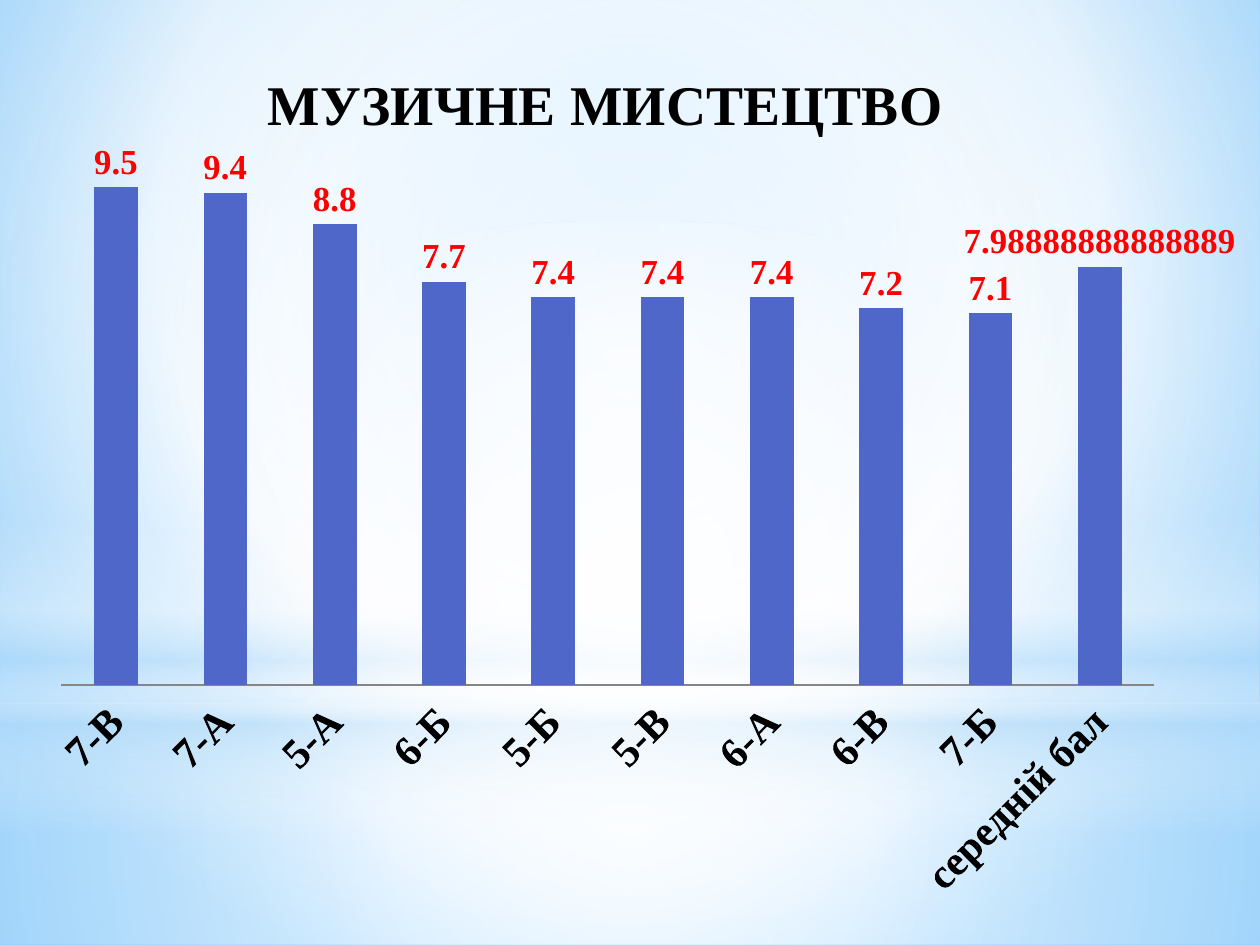
from lxml import etree
from pptx import Presentation
from pptx.chart.data import CategoryChartData
from pptx.dml.color import RGBColor
from pptx.enum.chart import XL_CHART_TYPE, XL_LABEL_POSITION, XL_TICK_LABEL_POSITION, XL_TICK_MARK
from pptx.enum.shapes import MSO_SHAPE
from pptx.oxml import parse_xml
from pptx.oxml.ns import nsdecls, qn
from pptx.util import Inches, Pt

COLUMNS = XL_CHART_TYPE.COLUMN_CLUSTERED
OUTSIDE_END = XL_LABEL_POSITION.OUTSIDE_END
LABELS_LOW = XL_TICK_LABEL_POSITION.LOW
NO_TICK = XL_TICK_MARK.NONE
RECTANGLE, OVAL = MSO_SHAPE.RECTANGLE, MSO_SHAPE.OVAL

SERIF = "Times New Roman"
WHITE, PALE, BLACK, RED = "FFFFFF", "B4DCFA", "000000", "FF0000"
CENTRE = (50, 50, 50, 50)
SCORES = {
    "7-В": 9.5, "7-А": 9.4, "5-А": 8.8, "6-Б": 7.7, "5-Б": 7.4,
    "5-В": 7.4, "6-А": 7.4, "6-В": 7.2, "7-Б": 7.1,
    "середній бал": 7.99,
}
AVERAGE_LABEL = "7.98888888888889"


def colour(value):
    return RGBColor.from_string(value)


def format_font(font, size, value=BLACK, name=SERIF, bold=True):
    font.size, font.name, font.bold = Pt(size), name, bold
    font.color.rgb = colour(value)


def write_text(frame, text, **style):
    frame.text = text
    format_font(frame.paragraphs[0].runs[0].font, **style)


def gradient(stops, focus=None):
    stop_xml = "".join(
        f'<a:gs pos="{place * 1000}"><a:srgbClr val="{value}">'
        f'<a:alpha val="{opacity * 1000}"/></a:srgbClr></a:gs>'
        for place, value, opacity in stops)
    if focus:
        sides = " ".join(f'{side}="{share * 1000}"' for side, share in zip("ltrb", focus))
        direction = f'<a:path path="circle"><a:fillToRect {sides}/></a:path>'
    else:
        direction = '<a:lin ang="5400000" scaled="0"/>'
    return parse_xml(f'<a:gradFill {nsdecls("a")} rotWithShape="1">'
                     f'<a:gsLst>{stop_xml}</a:gsLst>{direction}</a:gradFill>')


def swap_fill(properties, fill):
    solid = properties.find(qn("a:solidFill"))
    properties.replace(solid, fill)


def add_glow(page, kind, box, stops, focus=None):
    shape = page.shapes.add_shape(kind, *map(Inches, box))
    shape.shadow.inherit = False
    shape.line.fill.background()
    shape.fill.solid()
    swap_fill(shape._element.spPr, gradient(stops, focus))


def draw_backdrop(page, width, height):
    page.background.fill.solid()
    swap_fill(page.element.find(".//" + qn("p:bgPr")), gradient(
        [(0, "9ED5FF", 100), (60, WHITE, 100), (100, "5BB9FF", 100)], (20, 10, 20, 60)))
    horizon = 5.58
    add_glow(page, RECTANGLE, (0, horizon, width, height - horizon),
             [(0, WHITE, 91), (37, WHITE, 76), (100, PALE, 79)], CENTRE)
    add_glow(page, RECTANGLE, (0, 0, width, horizon),
             [(0, WHITE, 89), (48, WHITE, 62), (100, PALE, 79)], CENTRE)
    add_glow(page, RECTANGLE, (0, 4.12, width, 2.5),
             [(0, WHITE, 0), (29, WHITE, 30), (45, PALE, 40),
              (55, WHITE, 26), (65, PALE, 60), (100, WHITE, 0)])
    add_glow(page, OVAL, (0, 1.75, width, 5.58),
             [(0, WHITE, 100), (56, WHITE, 0)], CENTRE)


def set_layout(parent, index, box, inner=False, **lengths):
    for old in parent.findall(qn("c:layout")):
        parent.remove(old)
    width, height = box[2:]
    sizes = {"x": width, "y": height, "w": width, "h": height}
    settings = {"layoutTarget": "inner"} if inner else {}
    settings.update(xMode="edge", yMode="edge")
    settings.update({side: length / sizes[side] for side, length in lengths.items()})
    layout = etree.Element(qn("c:layout"))
    manual = etree.SubElement(layout, qn("c:manualLayout"))
    for tag, value in settings.items():
        etree.SubElement(manual, qn("c:" + tag)).set("val", str(value))
    parent.insert(index, layout)


def draw_chart(page, box):
    data = CategoryChartData()
    data.categories = list(SCORES)
    data.add_series("Series 1", list(SCORES.values()))
    chart = page.shapes.add_chart(COLUMNS, *map(Inches, box), data).chart
    format_font(chart.font, 10, name="Karla", bold=False)
    chart.has_legend = False

    title = chart.chart_title
    write_text(title.text_frame, "МУЗИЧНЕ МИСТЕЦТВО", size=32)
    title.include_in_layout = False
    set_layout(title._element, 1, box, x=1.78, y=0.11)
    set_layout(chart._chartSpace.chart.plotArea, 0, box, inner=True,
               x=0.21, y=0.92, w=8.75, h=4.16)

    scale = chart.value_axis
    scale.minimum_scale, scale.maximum_scale = 0, 10
    scale.has_major_gridlines = False
    scale.visible = False

    classes = chart.category_axis
    classes.major_tick_mark = classes.minor_tick_mark = NO_TICK
    classes.tick_label_position = LABELS_LOW
    classes.format.line.color.rgb = colour("868686")
    classes.format.line.width = Pt(1)
    format_font(classes.tick_labels.font, 24)
    classes._element.find(".//" + qn("a:bodyPr")).set("rot", "-2700000")

    plot = chart.plots[0]
    plot.gap_width = 150
    plot.vary_by_categories = False
    bars = plot.series[0]
    bars.format.fill.solid()
    bars.format.fill.fore_color.rgb = colour("4E67C8")
    labels = bars.data_labels
    labels.show_value = True
    labels.position = OUTSIDE_END
    labels.number_format, labels.number_format_is_linked = "General", False
    format_font(labels.font, 20, RED)

    average = bars.points[len(SCORES) - 1].data_label
    write_text(average.text_frame, AVERAGE_LABEL, size=20, value=RED)
    average.position = OUTSIDE_END


def main():
    width, height = 10, 7.5
    deck = Presentation()
    deck.slide_width, deck.slide_height = Inches(width), Inches(height)
    page = deck.slides.add_slide(deck.slide_layouts[6])
    draw_backdrop(page, width, height)
    draw_chart(page, (0.28, 0.36, 9.53, 6.85))
    deck.save("out.pptx")


if __name__ == "__main__":
    main()
